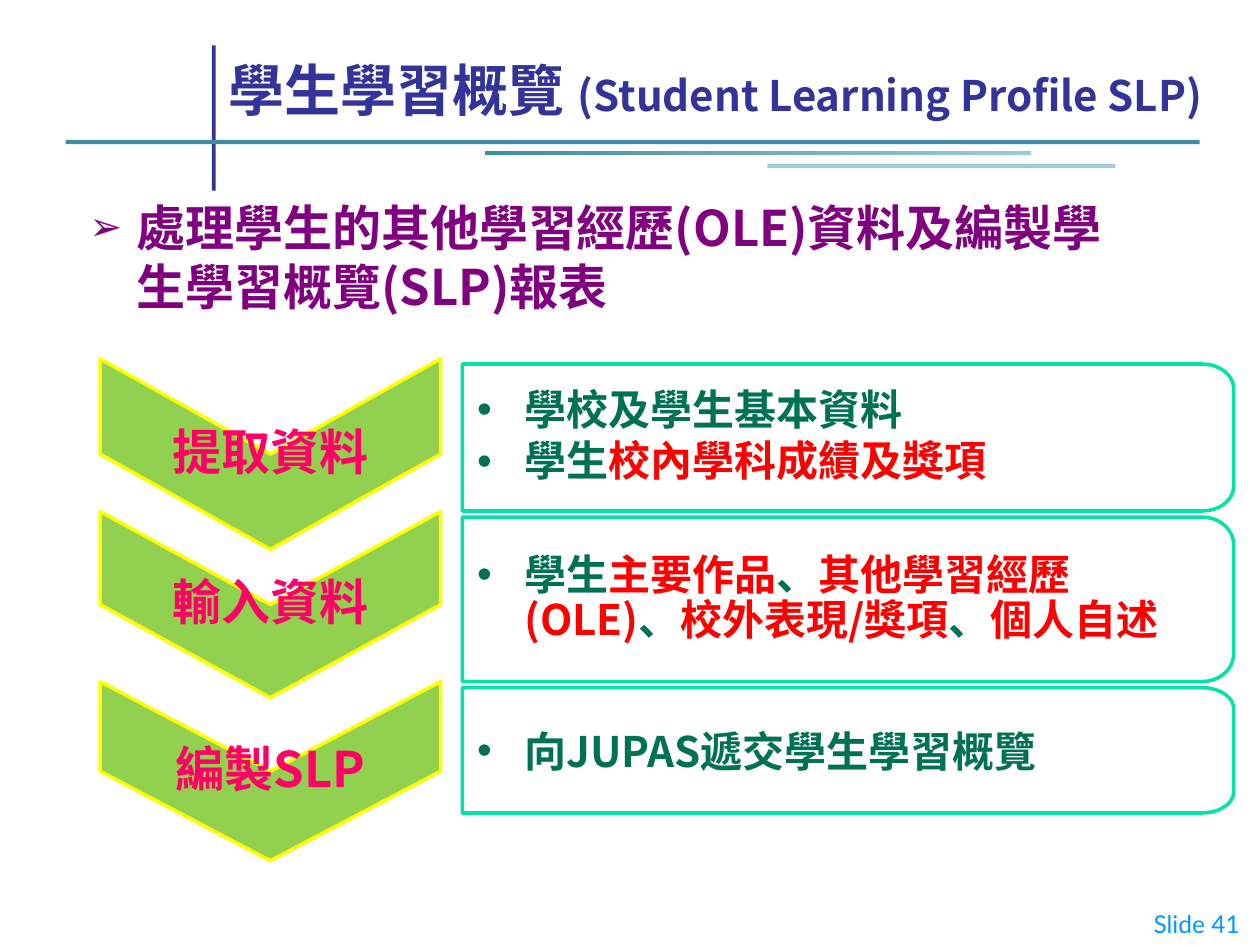
"""Build the Student Learning Profile slide: title, lead sentence and three process steps."""
import math

import pptx
import pptx.dml.color
import pptx.enum.shapes
import pptx.enum.text
import pptx.oxml.ns
import pptx.util
from lxml import etree

Pt = pptx.util.Pt
MIDDLE = pptx.enum.text.MSO_ANCHOR.MIDDLE
CENTER = pptx.enum.text.PP_ALIGN.CENTER
RIGHT = pptx.enum.text.PP_ALIGN.RIGHT
qn = pptx.oxml.ns.qn
CJK = "Noto Sans CJK SC"
GREEN, RED = "007254", "FF0000"


def rgb(value):
    return pptx.dml.color.RGBColor.from_string(value)


def write(s, paragraphs, font=CJK, size=24, bold=True, align=None, anchor=None,
          insets=(7.2, 3.6, 7.2, 3.6), bullet=None, bullet_size=100, line=None, after=0):
    tf = s.text_frame
    tf.word_wrap = True
    tf.margin_left, tf.margin_top, tf.margin_right, tf.margin_bottom = map(Pt, insets)
    if anchor is not None:
        tf.vertical_anchor = anchor
    for i, runs in enumerate(paragraphs):
        p = tf.add_paragraph() if i else tf.paragraphs[0]
        p.alignment = align
        p.line_spacing = line
        if i < len(paragraphs) - 1:
            p.space_after = Pt(after)
        if bullet:
            pPr = p._p.get_or_add_pPr()
            pPr.set("marL", str(Pt(27)))
            pPr.set("indent", str(Pt(-27)))
            color = etree.SubElement(pPr, qn("a:buClr"))
            etree.SubElement(color, qn("a:srgbClr"), val=runs[0][1])
            etree.SubElement(pPr, qn("a:buSzPct"), val=str(bullet_size * 1000))
            etree.SubElement(pPr, qn("a:buFont"), typeface="Arial")
            etree.SubElement(pPr, qn("a:buChar"), char=bullet)
        for text, color, *own_size in runs:
            r = p.add_run()
            r.text = text
            r.font.size = Pt(own_size[0] if own_size else size)
            r.font.bold = bold
            r.font.color.rgb = rgb(color)
            r.font.name = font
            etree.SubElement(r._r.get_or_add_rPr(), qn("a:ea"), typeface=font)


prs = pptx.Presentation()
prs.slide_width, prs.slide_height = Pt(720), Pt(540)
slide = prs.slides.add_slide(prs.slide_layouts[6])
shapes = slide.shapes

for x, y, w, h, colors in [
    (121, 26, 2.3, 83, ["333399"]),
    (37.5, 80, 648, 2.4, ["3F8DA5"]),
    (277, 86, 312, 2.4, ["3F8DA5", "9BCAD9"]),
    (438.5, 93.6, 199, 2.4, ["A1CDDB"]),
]:
    s = shapes.add_shape(pptx.enum.shapes.MSO_SHAPE.RECTANGLE, Pt(x), Pt(y), Pt(w), Pt(h))
    s.shadow.inherit = False
    s.line.fill.background()
    if len(colors) > 1:
        s.fill.gradient()
        s.fill.gradient_angle = 0
        for stop, color in zip(s.fill.gradient_stops, colors):
            stop.color.rgb = rgb(color)
    else:
        s.fill.solid()
        s.fill.fore_color.rgb = rgb(colors[0])

s = shapes.add_textbox(Pt(0), Pt(516), Pt(720), Pt(24))
write(s, [[("Slide 41", "0099FF")]], font="Lato", size=14, bold=False, align=RIGHT,
      insets=(7.2, 3.6, 11.5, 3.6))

s = shapes.add_textbox(Pt(123.5), Pt(18), Pt(684), Pt(66))
write(s, [[("學生學習概覽 ", "333399", 32), ("(Student Learning Profile SLP)", "333399")]],
      anchor=MIDDLE)

s = shapes.add_textbox(Pt(44), Pt(109.5), Pt(620), Pt(76))
write(s, [[("處理學生的其他學習經歷(OLE)資料及編製學生學習概覽(SLP)報表", "800080")]],
      size=28, bullet="➢", bullet_size=80)

steps = [
    ("提取資料", 205, 109, 208, 84, 0.9, [
        [("學校及學生基本資料", GREEN)],
        [("學生", GREEN), ("校內學科成績及獎項", RED)],
    ]),
    ("輸入資料", 292.3, 106.4, 295.5, 94, 0.9, [
        [("學生", GREEN), ("主要作品", RED), ("、", GREEN), ("其他學習經歷 (OLE)", RED),
         ("、", GREEN), ("校外表現/獎項", RED), ("、", GREEN), ("個人自述", RED)],
    ]),
    ("編製SLP", 389.5, 102.4, 393, 71.6, 1.0, [
        [("向JUPAS遞交學生學習概覽", GREEN)],
    ]),
]
left, mid, right = 57.2, 154.5, 251.8
box_left, box_right, rx = 264.2, 705, 18
for label, top, height, box_top, box_height, spacing, details in steps:
    half, bottom, ry = top + height / 2, top + height, box_height / 6
    box_bottom = box_top + box_height
    chevron = [(right, top), (right, half), (mid, bottom), (left, half), (left, top), (mid, half)]
    angles = [math.radians(a) for a in range(0, 91, 10)]
    corner = [(box_right - rx + rx * math.sin(a), ry - ry * math.cos(a)) for a in angles]
    box = [(box_left, box_bottom), (box_left, box_top)]
    box += [(x, box_top + y) for x, y in corner]
    box += [(x, box_bottom - y) for x, y in reversed(corner)]
    outlines = []
    for points, fill, line in [(chevron, "92D050", "FFFF00"), (box, "FFFFFF", "00E4A8")]:
        points = [(Pt(x), Pt(y)) for x, y in points]
        builder = shapes.build_freeform(*points[0], scale=1.0)
        builder.add_line_segments(points[1:], close=True)
        s = builder.convert_to_shape()
        s.shadow.inherit = False
        s.fill.solid()
        s.fill.fore_color.rgb = rgb(fill)
        s.line.color.rgb = rgb(line)
        s.line.width = Pt(2)
        outlines.append(s)
    arrow, panel = outlines
    color = panel._element.spPr.find(qn("a:solidFill")).find(qn("a:srgbClr"))
    etree.SubElement(color, qn("a:alpha"), val="90000")
    write(arrow, [[(label, "FF0066")]], size=28, align=CENTER, anchor=MIDDLE,
          insets=(1.4, 1.4, 1.4, 1.4), line=0.9)
    write(panel, details, align=pptx.enum.text.PP_ALIGN.LEFT, anchor=MIDDLE,
          insets=(8.5, 6, 6, 6), bullet="•", line=spacing, after=3.6)

prs.save("out.pptx")
